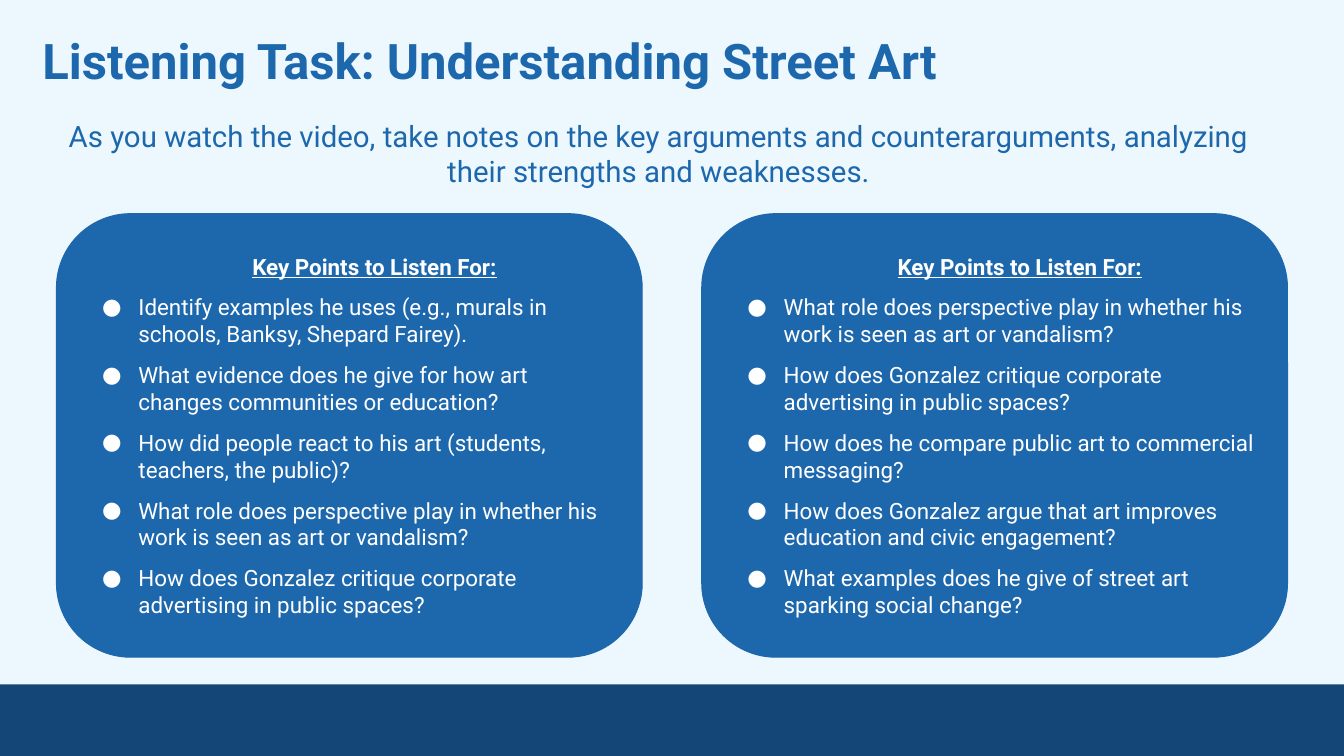
"""Build the street art listening task slide."""
from dataclasses import dataclass

from lxml.etree import SubElement
from pptx import Presentation
from pptx.dml.color import RGBColor
from pptx.enum.shapes import MSO_SHAPE as Shape
from pptx.enum.text import MSO_ANCHOR as Anchor, PP_ALIGN as Align
from pptx.oxml.ns import qn
from pptx.util import Inches, Pt

FONT = "Roboto"
BLUE, NAVY, PALE, WHITE = "1D67AC", "144777", "ECF8FE", "FFFFFF"


@dataclass
class Panel:
    left: float
    points: list[str]


@dataclass
class Caption:
    text: str
    top: float
    width: float
    height: float
    inset: float
    size: float
    bold: bool
    align: Align
    anchor: Anchor


PERSPECTIVE = "What role does perspective play in whether his work is seen as art or vandalism?"
CRITIQUE = "How does Gonzalez critique corporate advertising in public spaces?"

PANELS = [
    Panel(0.56, [
        "Identify examples he uses (e.g., murals in schools, Banksy, Shepard Fairey).",
        "What evidence does he give for how art changes communities or education?",
        "How did people react to his art (students, teachers, the public)?",
        PERSPECTIVE,
        CRITIQUE,
    ]),
    Panel(6.96, [
        PERSPECTIVE,
        CRITIQUE,
        "How does he compare public art to commercial messaging?",
        "How does Gonzalez argue that art improves education and civic engagement?",
        "What examples does he give of street art sparking social change?",
    ]),
]

CAPTIONS = [
    Caption("Listening Task: Understanding Street Art",
            0.16, 12.19, 0.86, 0.13, 35, True, Align.LEFT, Anchor.MIDDLE),
    Caption("As you watch the video, take notes on the key arguments and "
            "counterarguments, analyzing their strengths and weaknesses.",
            1.07, 12.48, 0.91, 0.1, 21, False, Align.CENTER, Anchor.TOP),
]


def color(code: str) -> RGBColor:
    return RGBColor.from_string(code)


def style_font(para, size: float, code: str, bold: bool = False, underline: bool = False) -> None:
    for span in para.runs:
        span.font.name = FONT
        span.font.size = Pt(size)
        span.font.bold = bold
        span.font.underline = underline
        span.font.color.rgb = color(code)


def set_frame(frame, inset: float, anchor: Anchor) -> None:
    frame.word_wrap = True
    frame.vertical_anchor = anchor
    frame.margin_left = frame.margin_right = Inches(inset)
    frame.margin_top = frame.margin_bottom = Inches(inset)


def add_filled(page, kind: Shape, left: float, top: float, width: float, height: float, code: str):
    box = page.shapes.add_shape(kind, Inches(left), Inches(top), Inches(width), Inches(height))
    box.shadow.inherit = False
    box.fill.solid()
    box.fill.fore_color.rgb = color(code)
    box.line.fill.background()
    return box


def add_caption(page, caption: Caption) -> None:
    box = page.shapes.add_textbox(Inches(0.29), Inches(caption.top),
                                  Inches(caption.width), Inches(caption.height))
    set_frame(box.text_frame, caption.inset, caption.anchor)
    box.text_frame.text = caption.text
    para = box.text_frame.paragraphs[0]
    para.alignment = caption.align
    style_font(para, caption.size, BLUE, caption.bold)


def set_indent(para, hanging: float = 0) -> None:
    properties = para._p.get_or_add_pPr()
    properties.set("marL", str(Inches(0.5)))
    properties.set("indent", str(-Inches(hanging)))


def add_bullet(para) -> None:
    properties = para._p.get_or_add_pPr()
    bullet_color = SubElement(properties, qn("a:buClr"))
    SubElement(bullet_color, qn("a:srgbClr"), val=WHITE)
    SubElement(properties, qn("a:buFont"), typeface=FONT)
    SubElement(properties, qn("a:buChar"), char="●")


def add_panel(page, panel: Panel) -> None:
    box = add_filled(page, Shape.ROUNDED_RECTANGLE, panel.left, 2.12, 5.81, 4.4, BLUE)
    box.adjustments[0] = 0.167
    box.line.color.rgb = color(BLUE)
    box.line.width = Pt(0.75)
    frame = box.text_frame
    set_frame(frame, 0.1, Anchor.MIDDLE)
    frame.text = "\n".join(["Key Points to Listen For:", *panel.points])
    heading, *bullets = frame.paragraphs
    heading.alignment = Align.CENTER
    set_indent(heading)
    style_font(heading, 16, WHITE, bold=True, underline=True)
    for para in bullets:
        para.alignment = Align.LEFT
        para.space_before = Pt(10)
        set_indent(para, 0.36)
        add_bullet(para)
        style_font(para, 16, WHITE)
    bullets[-1].space_after = Pt(10)


def main() -> None:
    deck = Presentation()
    deck.slide_width, deck.slide_height = Inches(13.33), Inches(7.5)
    page = deck.slides.add_slide(deck.slide_layouts[6])
    page.background.fill.solid()
    page.background.fill.fore_color.rgb = color(PALE)
    add_filled(page, Shape.RECTANGLE, 0, 6.79, 13.33, 0.71, NAVY)
    for caption in CAPTIONS:
        add_caption(page, caption)
    for panel in PANELS:
        add_panel(page, panel)
    deck.save("out.pptx")


if __name__ == "__main__":
    main()
